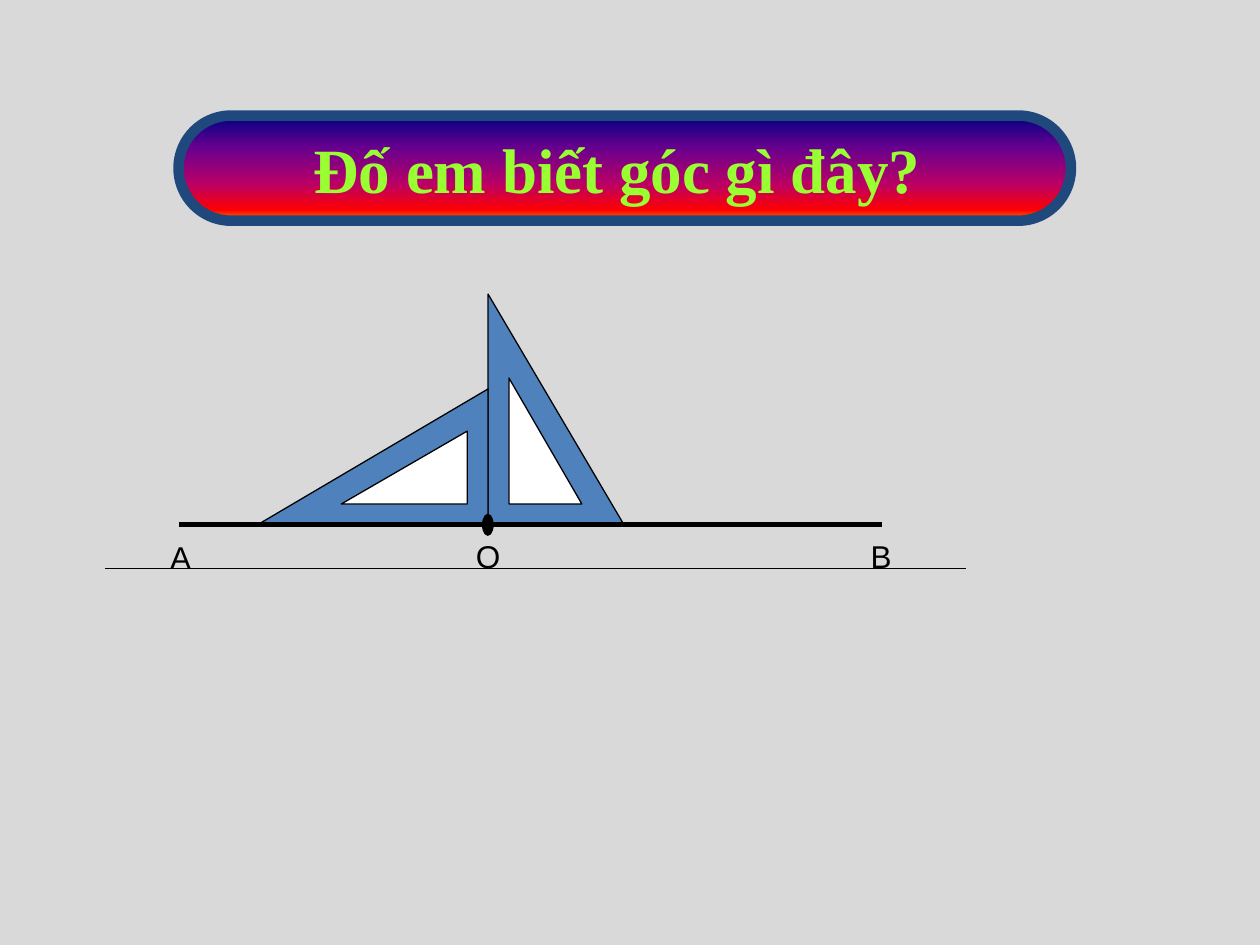
from lxml.etree import SubElement
from pptx import Presentation
from pptx.dml.color import RGBColor
from pptx.enum.shapes import MSO_CONNECTOR as Connector, MSO_SHAPE as Shape
from pptx.enum.text import MSO_ANCHOR as Anchor, MSO_AUTO_SIZE as AutoSize, PP_ALIGN as Align
from pptx.oxml.ns import qn
from pptx.util import Cm, Pt

BLACK = "000000"
TITLE_STOPS = [(0, "000082"), (30, "66008F"), (65, "BA0066"), (90, "FF0000"), (100, "FF8200")]


def color(value):
    return RGBColor.from_string(value)


def add_shape(slide, kind, box, fill, line=BLACK, width=0.75):
    shape = slide.shapes.add_shape(kind, *map(Cm, box))
    shape.shadow.inherit = False
    shape.fill.solid()
    shape.fill.fore_color.rgb = color(fill)
    shape.line.color.rgb = color(line)
    shape.line.width = Pt(width)
    return shape


def add_line(slide, left, right, y, width):
    line = slide.shapes.add_connector(Connector.STRAIGHT, Cm(left), Cm(y), Cm(right), Cm(y))
    line.line.color.rgb = color(BLACK)
    line.line.width = Pt(width)
    SubElement(line._element.spPr, qn("a:effectLst"))


def format_text(paragraph, font_name, size, font_color, bold=False):
    font = paragraph.runs[0].font
    font.name, font.size, font.bold = font_name, Pt(size), bold
    font.color.rgb = color(font_color)


def add_label(slide, text, box, wrap=False, align=Align.LEFT):
    label = slide.shapes.add_textbox(*map(Cm, box))
    frame = label.text_frame
    frame.word_wrap = wrap
    frame.auto_size = AutoSize.SHAPE_TO_FIT_TEXT
    frame.text = text
    frame.paragraphs[0].alignment = align
    format_text(frame.paragraphs[0], "Arial", 18, BLACK)


def set_gradient(shape, stops):
    shape.fill.gradient()
    gradient = shape._element.spPr.find(qn("a:gradFill"))
    stop_list = gradient.find(qn("a:gsLst"))
    for old_stop in list(stop_list):
        stop_list.remove(old_stop)
    for position, value in stops:
        stop = SubElement(stop_list, qn("a:gs"), pos=str(position * 1000))
        SubElement(stop, qn("a:srgbClr"), val=value)
    shape.fill.gradient_angle = 270  # counter-clockwise: runs top to bottom


def add_title(slide, box):
    banner = add_shape(slide, Shape.ROUNDED_RECTANGLE, box, "000082", "1F497D", 6)
    banner.adjustments[0] = 0.5
    set_gradient(banner, TITLE_STOPS)
    frame = banner.text_frame
    frame.word_wrap = False
    frame.vertical_anchor = Anchor.MIDDLE
    frame.text = "Đố em biết góc gì đây? "
    paragraph = frame.paragraphs[0]
    paragraph.alignment = Align.CENTER
    properties = paragraph._p.get_or_add_pPr()
    properties.set("marL", str(Cm(0.95)))
    properties.set("indent", str(-Cm(0.95)))
    format_text(paragraph, "Times New Roman", 36, "99FF33", bold=True)


def add_set_square(slide, corner_x, corner_y, lying=False):
    """Set square with its right angle at the corner; lying, it points left."""
    parts = [(0, 2.74, 4.65, "4F81BD"), (0.42, 1.47, 2.54, "FFFFFF")]
    for inset, width, height, fill in parts:
        left, top = corner_x + inset, corner_y - inset - height
        if lying:
            left = corner_x - inset - (height + width) / 2
            top = corner_y - inset - (width + height) / 2
        triangle = add_shape(slide, Shape.RIGHT_TRIANGLE, (left, top, width, height), fill)
        triangle.rotation = 270 if lying else 0


def add_angle_figure(slide, left, top, width):
    vertex = left + 6.24
    # Two set squares back to back
    add_set_square(slide, vertex, top)
    add_set_square(slide, vertex, top, lying=True)
    # Straight angle AOB
    add_line(slide, left, vertex + 0.11, top, 3)
    add_line(slide, vertex - 0.11, left + width, top, 3)
    # Point names
    add_label(slide, "A", (left - 0.42, top + 0.14, 1.22, 1.45))
    add_label(slide, "O", (vertex - 0.85, top + 0.12, 1.7, 1.02), True, Align.CENTER)
    add_label(slide, "B", (left + width - 0.48, top + 0.12, 1.19, 1.45))
    # Vertex and lower rule
    add_shape(slide, Shape.OVAL, (vertex - 0.11, top - 0.21, 0.21, 0.42), BLACK)
    add_line(slide, left - 1.48, left + width + 1.69, top + 0.88, 0.75)


def main():
    presentation = Presentation()
    presentation.slide_width, presentation.slide_height = Cm(25.4), Cm(19.05)
    slide = presentation.slides.add_slide(presentation.slide_layouts[6])
    slide.background.fill.solid()
    slide.background.fill.fore_color.rgb = color("D9D9D9")
    add_angle_figure(slide, 3.6, 10.58, 14.18)
    add_title(slide, (3.6, 2.33, 17.99, 2.12))
    presentation.save("out.pptx")


if __name__ == "__main__":
    main()
